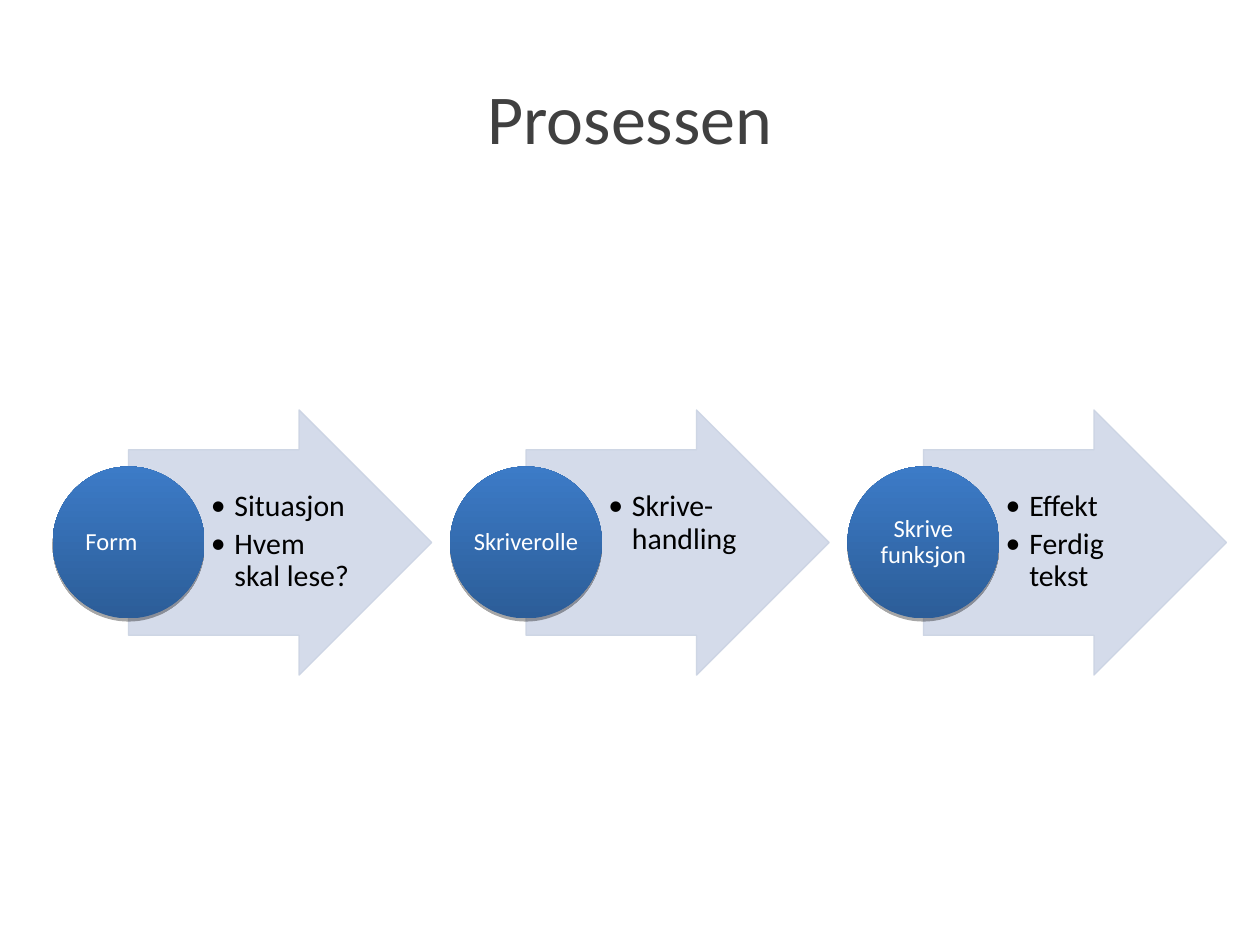
from lxml import etree
from pptx import Presentation
from pptx.dml.color import RGBColor
from pptx.enum import shapes, text
from pptx.oxml.ns import qn
from pptx.util import Pt

FONT = "Calibri"
MID = 310       # vertical centre of the row
LEFT = 73.5     # left edge of the first arrow
STEP = 227.1    # distance between arrows
WIDE, HALF = 173.2, 75.75
DISC = 86.8

# Label, its right inset, and the list in the arrow
STAGES = [
    ("Form", 19.5, ["Situasjon", "Hvem skal lese?"]),
    ("Skriverolle", 0, ["Skrive-handling"]),
    ("Skrive funksjon", 0, ["Effekt", "Ferdig tekst"]),
]


def rgb(code):
    return RGBColor.from_string(code)


def add_xml(node, tag, **attrs):
    return etree.SubElement(node, qn(tag), {k: str(v) for k, v in attrs.items()})


def fade(fill, percent):
    color = fill._xPr.find(qn("a:solidFill"))[0]
    add_xml(color, "a:alpha", val=percent * 1000)


def write(shape, lines, size, color, align="CENTER", anchor="MIDDLE",
          inset=(0, 0, 0, 0), space=None, after=0, bullet=False):
    frame = shape.text_frame
    frame.word_wrap = True
    frame.vertical_anchor = text.MSO_ANCHOR[anchor]
    (frame.margin_left, frame.margin_top,
     frame.margin_right, frame.margin_bottom) = map(Pt, inset)
    for i, line in enumerate(lines):
        para = frame.add_paragraph() if i else frame.paragraphs[0]
        if bullet:
            props = para._p.get_or_add_pPr()
            props.set("marL", str(Pt(13.5)))
            props.set("indent", str(-Pt(13.5)))
            add_xml(props, "a:buFont", typeface=FONT)
            add_xml(props, "a:buChar", char="•")
        para.alignment = text.PP_ALIGN[align]
        para.line_spacing = space
        para.space_after = Pt(after)
        run = para.add_run()
        run.text = line
        run.font.name = FONT
        run.font.size = Pt(size)
        run.font.color.rgb = rgb(color)


def add_arrow(slide, x, lines):
    neck, tip = x + WIDE - HALF, x + WIDE
    body = HALF * 0.7
    points = [(x, MID - body), (neck, MID - body), (neck, MID - HALF), (tip, MID),
              (neck, MID + HALF), (neck, MID + body), (x, MID + body)]
    points = [(Pt(a), Pt(b)) for a, b in points]
    pen = slide.shapes.build_freeform(*points[0])
    pen.add_line_segments(points[1:], close=True)
    arrow = pen.convert_to_shape()
    arrow.shadow.inherit = False
    arrow.fill.solid()
    arrow.fill.fore_color.rgb = rgb("D0D8E8")
    fade(arrow.fill, 90)
    arrow.line.width = Pt(0.75)
    arrow.line.fill.solid()
    arrow.line.color.rgb = rgb("CBD3E3")
    fade(arrow.line.fill, 90)
    # Every list starts at the same height
    write(arrow, lines, 17, "000000", align="LEFT", anchor="TOP",
          inset=(47, 46.5, 47, 24), space=0.9, after=3, bullet=True)


def add_disc(slide, x, label, right):
    disc = slide.shapes.add_shape(
        shapes.MSO_SHAPE.OVAL, Pt(x - DISC / 2), Pt(MID - DISC / 2), Pt(DISC), Pt(DISC))
    disc.line.fill.background()
    disc.fill.gradient()
    disc.fill.gradient_angle = 90
    for stop, place, color in zip(disc.fill.gradient_stops, (0, 1), ("2C5D98", "3C7BC7")):
        stop.position = place
        stop.color.rgb = rgb(color)
    # Thin shadow below the disc
    disc.shadow.inherit = False
    effects = disc._element.spPr.find(qn("a:effectLst"))
    shade = add_xml(effects, "a:outerShdw", blurRad=0, dist=Pt(1.8),
                    dir=5400000, rotWithShape=0)
    add_xml(add_xml(shade, "a:srgbClr", val="000000"), "a:alpha", val=35000)
    write(disc, [label], 14, "FFFFFF", inset=(0, 0, right, 0), space=0.9)


def main():
    deck = Presentation()
    deck.slide_width, deck.slide_height = Pt(720), Pt(540)
    slide = deck.slides.add_slide(deck.slide_layouts[6])

    # Title
    title = slide.shapes.add_textbox(Pt(36), Pt(21.6), Pt(648), Pt(90))
    write(title, ["Prosessen"], 40, "404040")

    # Stages of the process
    for i, (label, right, lines) in enumerate(STAGES):
        x = LEFT + i * STEP
        add_arrow(slide, x, lines)
        add_disc(slide, x, label, right)

    deck.save("out.pptx")


if __name__ == "__main__":
    main()
